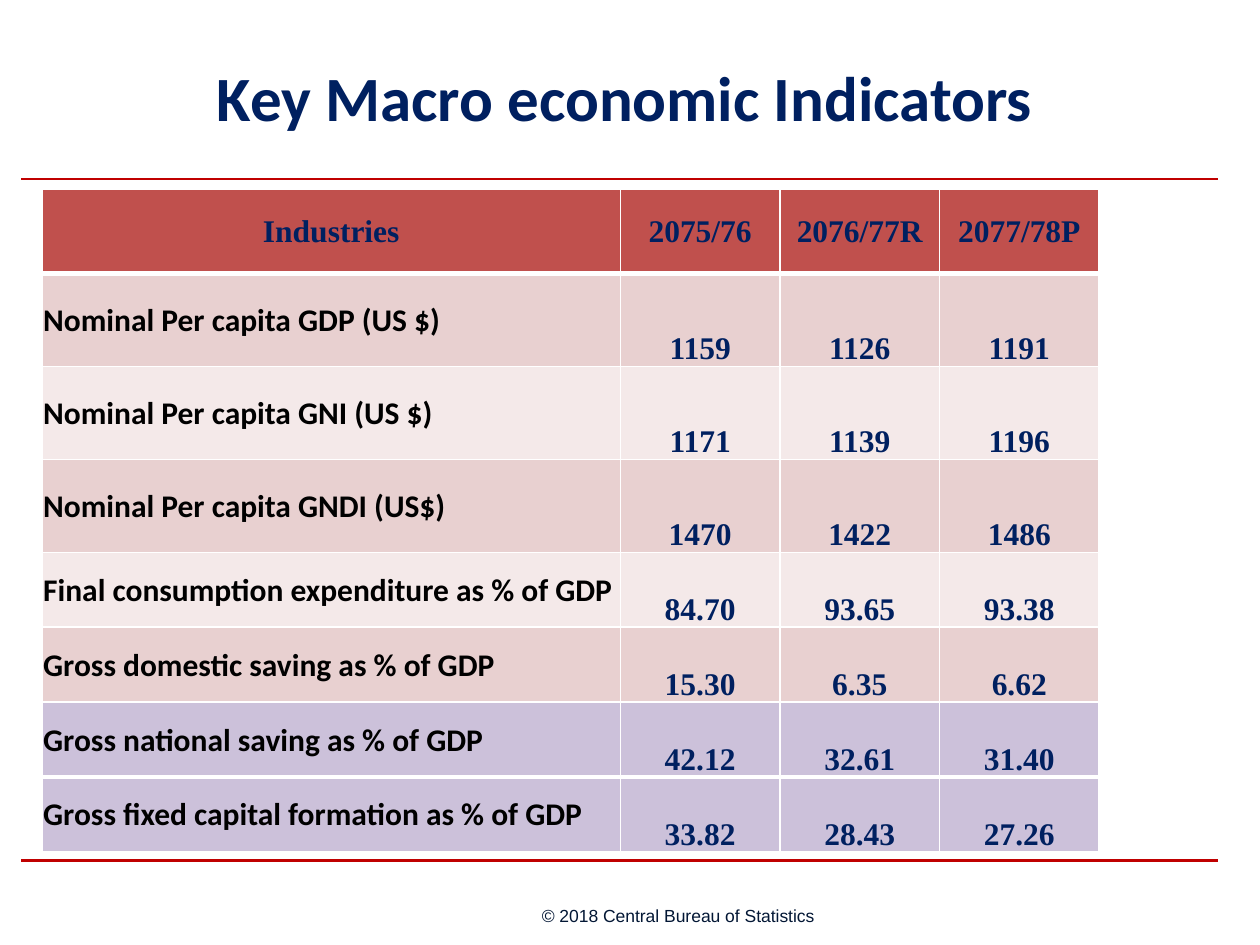
from lxml import etree
from pptx import Presentation
from pptx import util as u
from pptx.dml.color import RGBColor
from pptx.enum import shapes, text
from pptx.oxml import ns

COLORS = {
    "navy": "002060", "black": "000000", "white": "FFFFFF", "rule": "C00000",
    "footer": "031735", "header": "C0504D", "rose": "E8D0D0",
    "pale": "F4E9E9", "lilac": "CCC1DA",
}
TITLE = {"name": "Calibri", "size": u.Pt(36), "bold": True, "color": "navy"}
FOOTER = {"name": "Arial", "size": u.Pt(10), "color": "footer"}
LABEL = {"name": "Calibri", "size": u.Pt(18), "bold": True, "color": "black"}
FIGURE = {"name": "Times New Roman", "size": u.Pt(18), "bold": True, "color": "navy"}

HEADER = ["Industries", "2075/76", "2076/77R", "2077/78P"]
INDICATORS = [  # row height, fill, texts
    (53.1, "rose", ["Nominal Per capita GDP (US $)", "1159", "1126", "1191"]),
    (53.1, "pale", ["Nominal Per capita GNI (US $)", "1171", "1139", "1196"]),
    (53.1, "rose", ["Nominal Per capita GNDI (US$)", "1470", "1422", "1486"]),
    (42.85, "pale", ["Final consumption expenditure as % of GDP", "84.70", "93.65", "93.38"]),
    (42.85, "rose", ["Gross domestic saving as % of GDP", "15.30", "6.35", "6.62"]),
    (42.85, "lilac", ["Gross national saving as % of GDP", "42.12", "32.61", "31.40"]),
    (42.85, "lilac", ["Gross fixed capital formation as % of GDP", "33.82", "28.43", "27.26"]),
]
COLUMNS = [330.5, 91.2, 91.2, 91.2]


def rgb(name):
    return RGBColor.from_string(COLORS[name])


class SlideBuilder:
    def __init__(self, slide):
        self.s = slide

    def add_words(self, tf, words, style, align):
        p = tf.paragraphs[0]
        p.alignment = align
        r = p.add_run()
        r.text = words
        for key, value in style.items():
            if key == "color":
                r.font.color.rgb = rgb(value)
            else:
                setattr(r.font, key, value)

    def title(self, words, left, top, width, height):
        sp = self.s.shapes.title
        box = {"left": left, "top": top, "width": width, "height": height}
        for key, value in box.items():
            setattr(sp, key, u.Pt(value))
        sp.text_frame.vertical_anchor = text.MSO_ANCHOR.MIDDLE
        self.add_words(sp.text_frame, words, TITLE, text.PP_ALIGN.CENTER)

    def rule(self, y):
        line = self.s.shapes.add_connector(
            shapes.MSO_CONNECTOR.STRAIGHT, u.Pt(12.24), u.Pt(y), u.Pt(696.24), u.Pt(y))
        line.line.color.rgb = rgb("rule")
        line.line.width = u.Pt(1.5)
        etree.SubElement(line._element.spPr, ns.qn("a:effectLst"))

    def footer(self, words, left, top, width, height):
        sp = self.s.shapes.add_textbox(u.Pt(left), u.Pt(top), u.Pt(width), u.Pt(height))
        tf = sp.text_frame
        layout = {"margin_left": 0, "margin_right": 0, "margin_top": 0, "margin_bottom": 0,
                  "word_wrap": True, "vertical_anchor": text.MSO_ANCHOR.MIDDLE}
        for key, value in layout.items():
            setattr(tf, key, value)
        self.add_words(tf, words, FOOTER, text.PP_ALIGN.LEFT)

    def cell(self, cell, words, style, align, anchor, fill, top, bottom):
        layout = {"margin_left": u.Pt(0.7), "margin_right": u.Pt(0.7),
                  "margin_top": u.Pt(0.7), "margin_bottom": 0, "vertical_anchor": anchor}
        for key, value in layout.items():
            setattr(cell, key, value)
        # Borders come before the fill in the cell properties
        tcPr = cell._tc.get_or_add_tcPr()
        for side, width in {"L": 1, "R": 1, "T": top, "B": bottom}.items():
            ln = etree.SubElement(tcPr, ns.qn("a:ln" + side), w=str(u.Pt(width)))
            solid = etree.SubElement(ln, ns.qn("a:solidFill"))
            etree.SubElement(solid, ns.qn("a:srgbClr"), val=COLORS["white"])
        cell.fill.solid()
        cell.fill.fore_color.rgb = rgb(fill)
        self.add_words(cell.text_frame, words, style, align)

    def table(self, rows, left, top):
        frame = self.s.shapes.add_table(
            len(rows), len(COLUMNS), u.Pt(left), u.Pt(top),
            u.Pt(sum(COLUMNS)), u.Pt(sum(row[0] for row in rows)))
        tbl = frame.table
        tbl.horz_banding = False
        for column, width in zip(tbl.columns, COLUMNS):
            column.width = u.Pt(width)
        # Thick lines below the header and above the last row
        edges = [1, 3] + [1] * (len(rows) - 3) + [3, 1]
        for i, (height, fill, words) in enumerate(rows):
            tbl.rows[i].height = u.Pt(height)
            for j, word in enumerate(words):
                label = i > 0 and j == 0
                middle = i == 0 or j == 0
                self.cell(
                    tbl.cell(i, j), word, LABEL if label else FIGURE,
                    text.PP_ALIGN.LEFT if label else text.PP_ALIGN.CENTER,
                    text.MSO_ANCHOR.MIDDLE if middle else text.MSO_ANCHOR.BOTTOM,
                    fill, edges[i], edges[i + 1])


def main():
    prs = Presentation()
    prs.slide_width, prs.slide_height = u.Pt(720), u.Pt(540)
    builder = SlideBuilder(prs.slides.add_slide(prs.slide_layouts[5]))

    # Rules and footer
    for y in (102.24, 491.76):
        builder.rule(y)
    builder.footer("© 2018 Central Bureau of Statistics", 309.6, 516.24, 158.4, 13.7)

    # Title and table
    builder.title("Key Macro economic Indicators", 6, 18, 702, 74)
    builder.table([(48, "header", HEADER)] + INDICATORS, 24, 108.3)

    prs.save("out.pptx")


if __name__ == "__main__":
    main()
